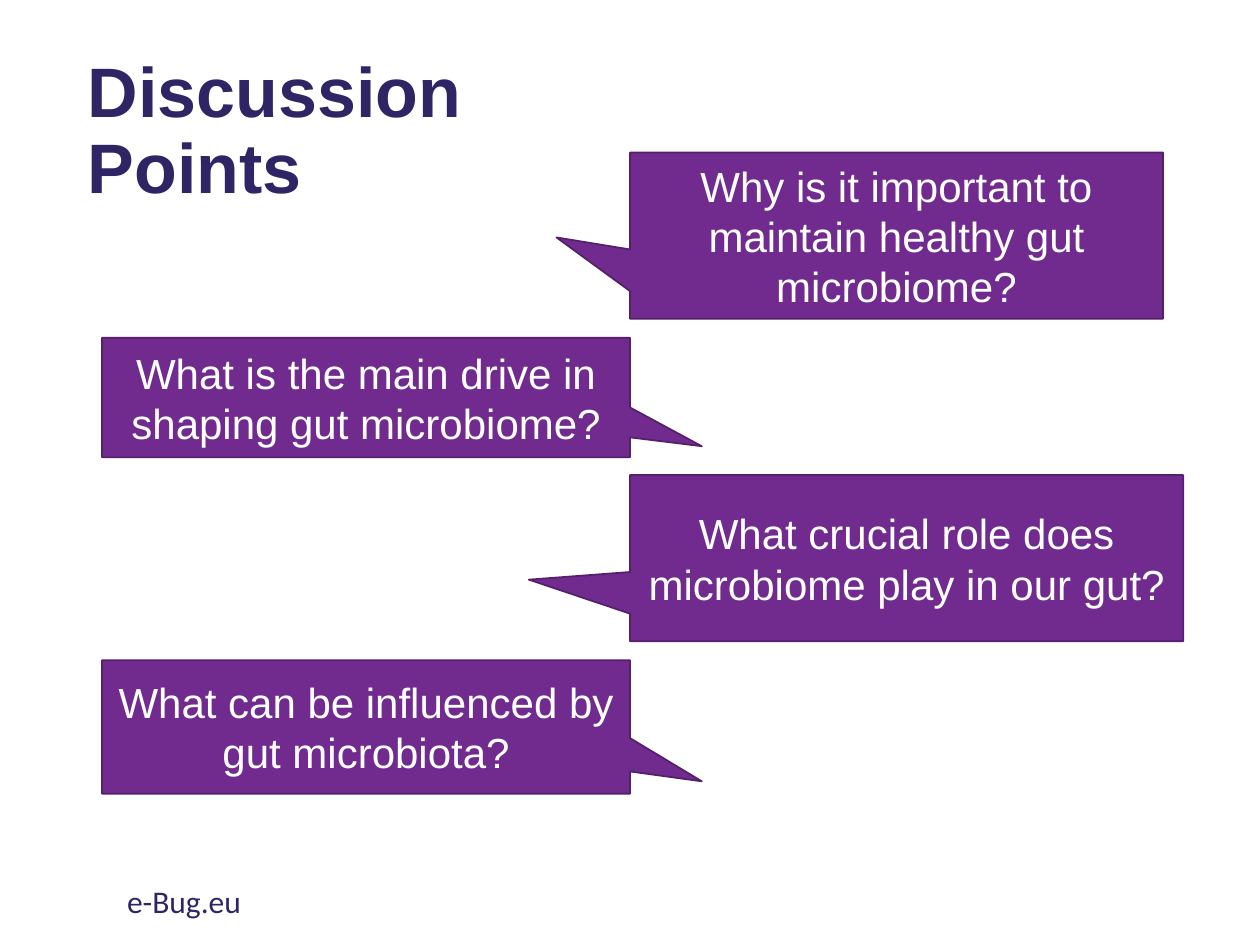
from pptx import Presentation
from pptx.dml.color import RGBColor
from pptx.enum.shapes import MSO_SHAPE
from pptx.enum.text import MSO_ANCHOR, PP_ALIGN
from pptx.util import Inches, Pt

NAVY, PURPLE, DARK_PURPLE, WHITE = "302564", "712B8F", "54206A", "FFFFFF"


def rgb(value):
    return RGBColor.from_string(value)


def write(sp, text, size, color, font="Arial", bold=False, align=PP_ALIGN.LEFT,
          anchor=MSO_ANCHOR.MIDDLE, spacing=None):
    tf = sp.text_frame
    tf.word_wrap = True
    tf.vertical_anchor = anchor
    p = tf.paragraphs[0]
    p.alignment = align
    if spacing:
        p.line_spacing = spacing
    r = p.add_run()
    r.text = text
    r.font.name = font
    r.font.size = Pt(size)
    r.font.bold = bold
    r.font.color.rgb = rgb(color)


prs = Presentation()
prs.slide_width, prs.slide_height = Inches(10), Inches(7.5)
s = prs.slides.add_slide(prs.slide_layouts[6])

# Title
sp = s.shapes.add_textbox(Inches(0.6), Inches(0.33), Inches(4.4), Inches(1.45))
write(sp, "Discussion Points", 40, NAVY, bold=True, spacing=0.9)

# Question callouts: left, top, width, height, pointer offset, text
callouts = [
    (5, 1.21, 4.23, 1.32, (-0.638, 0.011),
     "Why is it important to maintain healthy gut microbiome?"),
    (0.81, 2.68, 4.19, 0.95, (0.636, 0.407),
     "What is the main drive in shaping gut microbiome?"),
    (5, 3.77, 4.39, 1.32, (-0.683, 0.129),
     "What crucial role does microbiome play in our gut?"),
    (0.81, 5.24, 4.19, 1.06, (0.636, 0.407),
     "What can be influenced by gut microbiota?"),
]
for left, top, width, height, pointer, question in callouts:
    sp = s.shapes.add_shape(MSO_SHAPE.RECTANGULAR_CALLOUT, Inches(left), Inches(top),
                            Inches(width), Inches(height))
    sp.adjustments[0], sp.adjustments[1] = pointer
    sp.shadow.inherit = False
    sp.fill.solid()
    sp.fill.fore_color.rgb = rgb(PURPLE)
    sp.line.color.rgb = rgb(DARK_PURPLE)
    sp.line.width = Pt(1)
    write(sp, question, 24, WHITE, align=PP_ALIGN.CENTER)

# Footer
sp = s.shapes.add_textbox(Inches(0.91), Inches(6.95), Inches(3.38), Inches(0.4))
write(sp, "e-Bug.eu", 18, NAVY, font="Calibri", anchor=MSO_ANCHOR.TOP)

prs.save("out.pptx")
